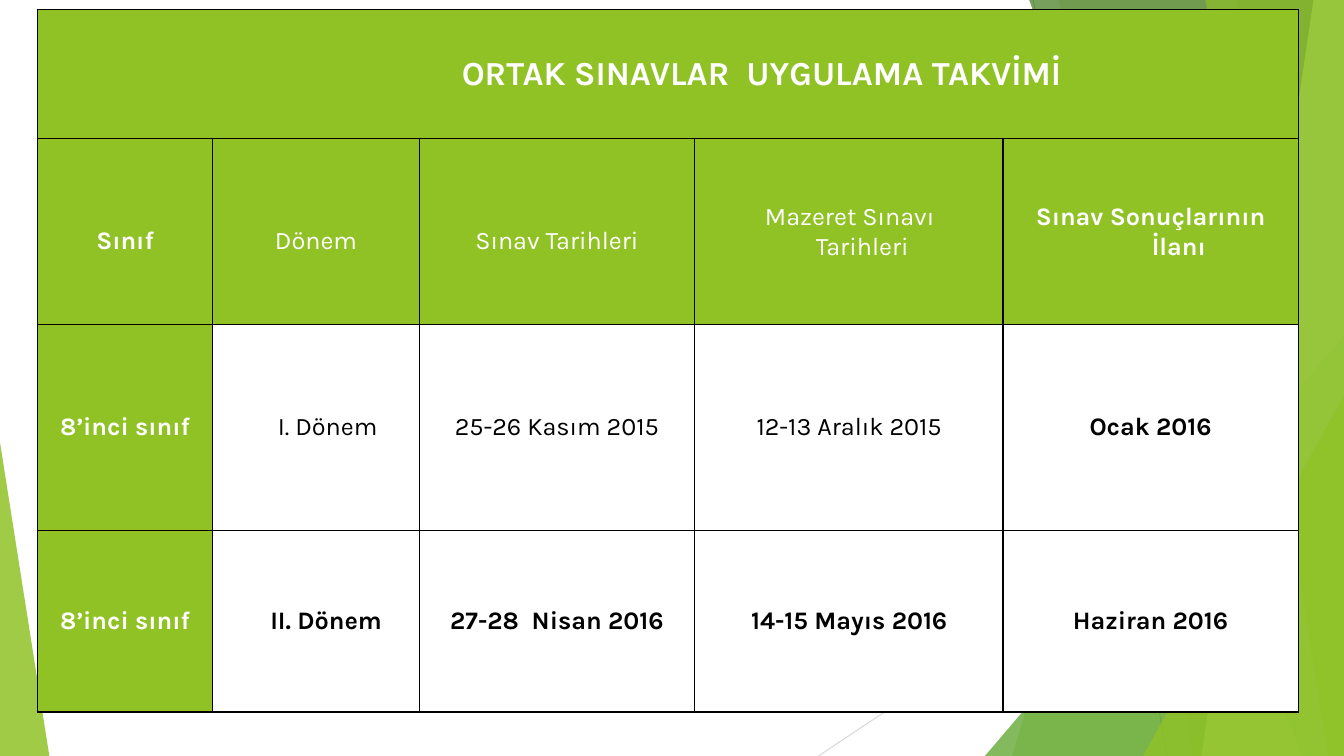
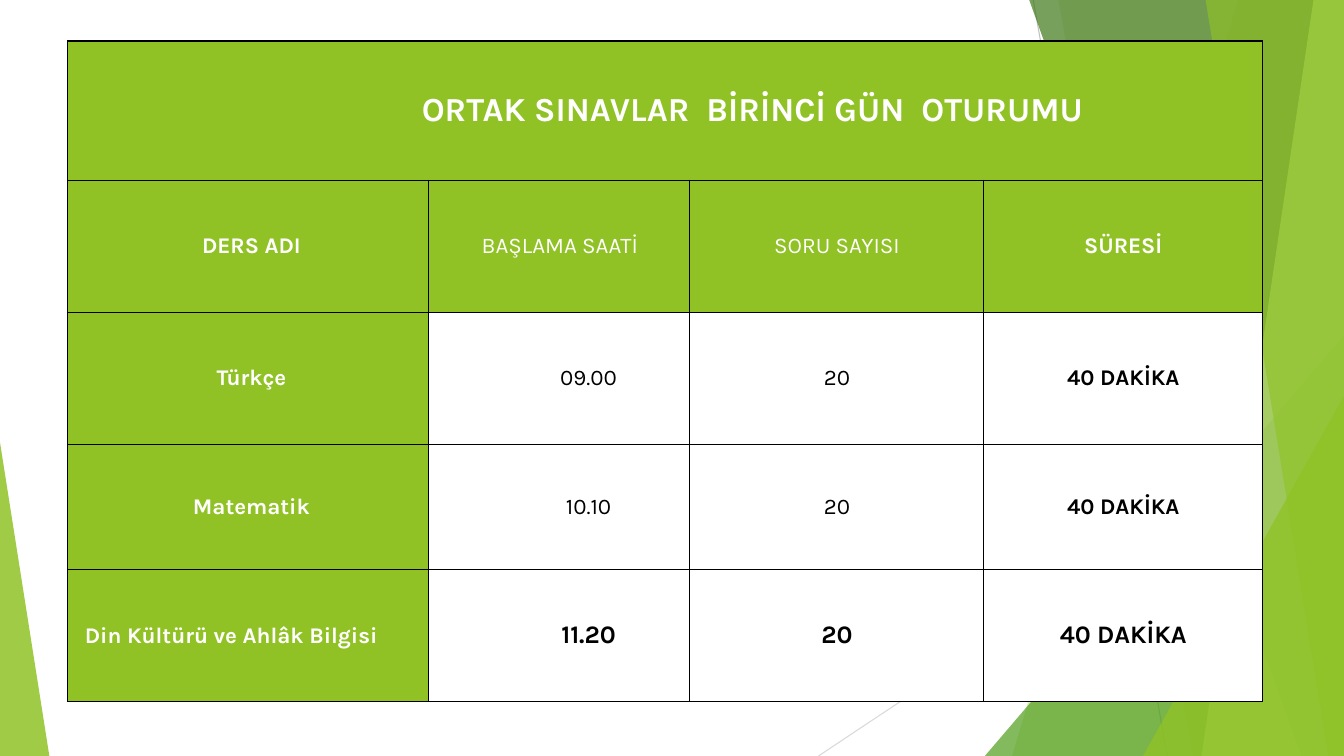
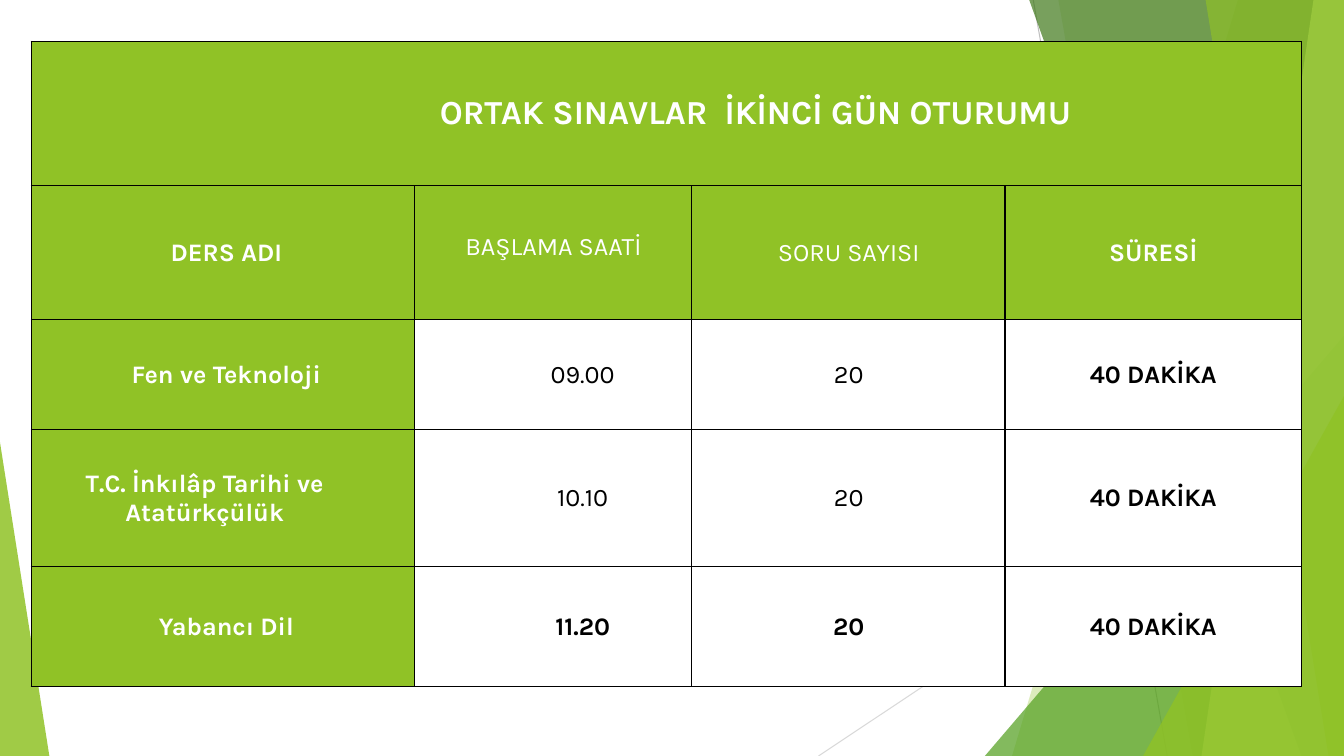
from lxml import etree
from pptx import Presentation
from pptx.dml.color import RGBColor
from pptx.enum.shapes import MSO_CONNECTOR, MSO_SHAPE
from pptx.enum.text import MSO_ANCHOR, PP_ALIGN
from pptx.oxml.ns import qn
from pptx.util import Inches, Pt

GREEN = RGBColor(0x90, 0xC2, 0x26)
LEAF = RGBColor(0x54, 0xA0, 0x21)
FOREST = RGBColor(0x3F, 0x78, 0x19)
LIME = RGBColor(0xC0, 0xE4, 0x74)
GRAY = RGBColor(0xBF, 0xBF, 0xBF)
LIGHT_GRAY = RGBColor(0xD9, 0xD9, 0xD9)
WHITE = RGBColor(0xFF, 0xFF, 0xFF)
BLACK = RGBColor(0x00, 0x00, 0x00)

STRAIGHT = MSO_CONNECTOR.STRAIGHT
TRIANGLE = MSO_SHAPE.ISOSCELES_TRIANGLE
CENTER = PP_ALIGN.CENTER
MIDDLE = MSO_ANCHOR.MIDDLE

FONT = "Karla"
TITLE_SIZE = 24
BLANK = 6


class Deck:
    def __init__(self):
        self.prs = Presentation()
        self.prs.slide_width = Inches(13.33)
        self.prs.slide_height = Inches(7.5)
        self.layout = self.prs.slide_layouts[BLANK]
        for ph in list(self.layout.placeholders):
            ph.element.getparent().remove(ph.element)
        self.s = None

    def x(self, percent):
        return round(self.prs.slide_width * percent / 100)

    def y(self, percent):
        return round(self.prs.slide_height * percent / 100)

    def slide(self):
        self.s = self.prs.slides.add_slide(self.layout)

    def line(self, x1, y1, x2, y2, color):
        sp = self.s.shapes.add_connector(
            STRAIGHT, self.x(x1), self.y(y1), self.x(x2), self.y(y2))
        sp.line.color.rgb = color
        sp.line.width = Pt(0.75)
        etree.SubElement(sp.element.spPr, qn("a:effectLst"))

    def paint(self, sp, color, opacity):
        sp.shadow.inherit = False
        sp.line.fill.background()
        sp.fill.solid()
        sp.fill.fore_color.rgb = color
        clr = sp.element.spPr.find(qn("a:solidFill"))[0]
        etree.SubElement(clr, qn("a:alpha"), val=str(opacity * 1000))

    def band(self, top, bottom, color, opacity):
        fb = self.s.shapes.build_freeform(self.x(top), 0)
        fb.add_line_segments([(self.x(100), 0), (self.x(100), self.y(100)),
                              (self.x(bottom), self.y(100))])
        self.paint(fb.convert_to_shape(), color, opacity)

    def triangle(self, left, top, width, peak, color, opacity):
        sp = self.s.shapes.add_shape(TRIANGLE, self.x(left), self.y(top),
                                     self.x(width), self.y(100 - top))
        sp.adjustments[0] = peak
        self.paint(sp, color, opacity)

    def share_shapes(self):
        tree = self.layout.element.cSld.spTree
        for sp in list(self.s.shapes):
            tree.append(sp.element)

    def borders(self, cell):
        tcPr = cell._tc.get_or_add_tcPr()
        for i, side in enumerate(("lnL", "lnR", "lnT", "lnB")):
            ln = etree.Element(qn(f"a:{side}"), w=str(Pt(1)))
            fill = etree.SubElement(ln, qn("a:solidFill"))
            etree.SubElement(fill, qn("a:srgbClr"), val=str(BLACK))
            tcPr.insert(i, ln)

    def cell_text(self, cell, text, size, bold, color,
                  indent=0, hang=0, right=0, top=0, spacing=None):
        cell.margin_right = Inches(right)
        cell.margin_top = Pt(top)
        p = cell.text_frame.paragraphs[0]
        p.text = text
        p.alignment = CENTER
        p.line_spacing = spacing
        p.font.name = FONT
        p.font.size = Pt(size)
        p.font.bold = bold
        p.font.color.rgb = color
        pPr = p._p.get_or_add_pPr()
        pPr.set("marL", str(Inches(indent)))
        pPr.set("indent", str(Inches(hang)))

    def table(self, box, widths, heights, title, title_indent, rows,
              indents, size, last_size, special):
        left, top, width, height = box
        n_rows, n_cols = len(heights), len(widths)
        tbl = self.s.shapes.add_table(
            n_rows, n_cols, self.x(left), self.y(top),
            self.x(width), self.y(height)).table
        tbl.first_row = tbl.horz_banding = False
        for col, w in zip(tbl.columns, widths):
            col.width = round(self.x(width) * w / sum(widths))
        for row, h in zip(tbl.rows, heights):
            row.height = round(self.y(height) * h / sum(heights))
        tbl.cell(0, 0).merge(tbl.cell(0, n_cols - 1))
        for r in range(n_rows):
            for c in range(n_cols):
                cell = tbl.cell(r, c)
                green = r < 2 or c == 0
                cell.margin_left = cell.margin_right = 0
                cell.margin_top = cell.margin_bottom = 0
                cell.vertical_anchor = MIDDLE
                cell.fill.solid()
                cell.fill.fore_color.rgb = GREEN if green else WHITE
                self.borders(cell)
                if r == 0:
                    continue
                last = r == n_rows - 1
                fmt = {"indent": 0 if r == 1 and c == 1 else indents[c]}
                fmt.update(special.get((r, c), {}))
                self.cell_text(cell, rows[r - 1][c],
                               last_size if last and c else size,
                               last or c in (0, n_cols - 1),
                               WHITE if green else BLACK, **fmt)
        self.cell_text(tbl.cell(0, 0), title, TITLE_SIZE, True, WHITE,
                       indent=title_indent)


def decorate(deck):
    deck.line(76.88, 0, 86.85, 100, GRAY)
    deck.line(100, 53.73, 60.9, 100, LIGHT_GRAY)
    deck.band(92.1, 75.3, GREEN, 30)
    deck.band(78.75, 88.73, GREEN, 20)
    deck.triangle(73.28, 44.4, 26.72, 1, LEAF, 72)
    deck.band(76.58, 96.83, FOREST, 70)
    deck.band(97.73, 89.4, LIME, 70)
    deck.band(89.7, 98.85, GREEN, 65)
    deck.triangle(85.05, 52.4, 14.95, 1, GREEN, 80)
    deck.triangle(0, 58.53, 3.67, 0, GREEN, 85)
    deck.share_shapes()


def session_rows(*subjects):
    times = ("09.00", "10.10", "11.20")
    head = ("DERS ADI", "BAŞLAMA SAATİ", "SORU SAYISI", "SÜRESİ")
    return [head] + [(subject, time, "20", "40 DAKİKA")
                     for subject, time in zip(subjects, times)]


def main():
    deck = Deck()
    deck.slide()
    decorate(deck)
    lowered = {(1, c): {"top": 13} for c in range(3)}
    deck.table(
        (2.78, 1.28, 93.82, 92.9),
        (1.74, 2.05, 2.73, 3.06, 2.93), (1.28, 1.84, 2.04, 1.8),
        "ORTAK SINAVLAR  UYGULAMA TAKVİMİ", 1.86,
        [("Sınıf", "Dönem", "Sınav Tarihleri", "Mazeret Sınavı Tarihleri",
          "Sınav Sonuçlarının İlanı"),
         ("8’inci sınıf", "I. Dönem", "25-26 Kasım 2015",
          "12-13 Aralık 2015", "Ocak 2016"),
         ("8’inci sınıf", "II. Dönem", "27-28  Nisan 2016",
          "14-15 Mayıs 2016", "Haziran 2016")],
        (0, 0.2, 0, 0.01, 0), 18, 18,
        {**lowered,
         (1, 3): {"indent": 0.55, "hang": -0.25, "right": 0.28,
                  "spacing": 1.03},
         (1, 4): {"indent": 0.67, "hang": -0.56, "right": 0.11,
                  "spacing": 1.03},
         (2, 1): {"indent": 0.23}})

    session_indents = (0.07, 0.59, 0.01, 0)
    deck.slide()
    deck.table(
        (5.02, 5.43, 88.95, 87.4),
        (3.58, 2.59, 2.92, 2.77), (1.38, 1.31, 1.31, 1.24, 1.31),
        "ORTAK SINAVLAR  BİRİNCİ GÜN  OTURUMU", 1.73,
        session_rows("Türkçe", "Matematik", "Din Kültürü ve Ahlâk Bilgisi"),
        session_indents, 16, 18,
        {(1, 1): {"indent": 0.52, "hang": -0.17, "right": 0.33,
                  "spacing": 0.98},
         (4, 0): {"right": 0.4, "spacing": 0.98}})

    deck.slide()
    deck.table(
        (2.33, 5.47, 94.5, 85.4),
        (3.8, 2.75, 3.11, 2.94), (1.43, 1.33, 1.09, 1.36, 1.19),
        "ORTAK SINAVLAR  İKİNCİ GÜN OTURUMU", 1.77,
        session_rows("Fen ve Teknoloji", "T.C. İnkılâp Tarihi ve Atatürkçülük",
                     "Yabancı Dil"),
        session_indents, 18, 18,
        {(1, 1): {"indent": 0.01, "spacing": Pt(12.9)},
         (3, 0): {"right": 0.43, "spacing": 0.98}})
    deck.prs.save("out.pptx")


if __name__ == "__main__":
    main()
